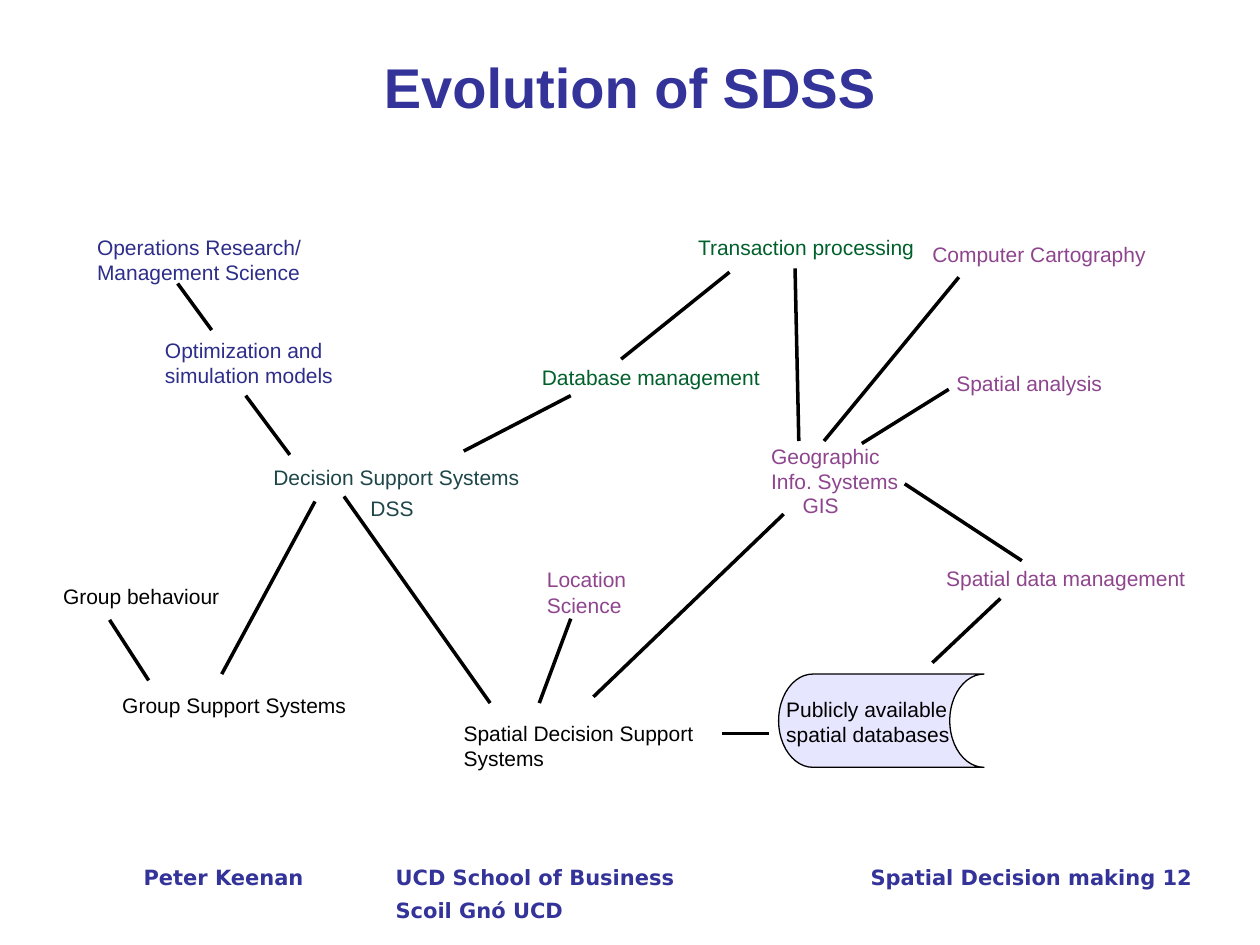
from lxml import etree
from pptx import Presentation
from pptx.dml.color import RGBColor
from pptx.enum.shapes import MSO_CONNECTOR, MSO_SHAPE
from pptx.enum.text import MSO_ANCHOR, PP_ALIGN
from pptx.oxml.ns import qn
from pptx.util import Inches, Pt

STRAIGHT = MSO_CONNECTOR.STRAIGHT
STORAGE = MSO_SHAPE.FLOWCHART_STORED_DATA
MIDDLE = MSO_ANCHOR.MIDDLE
CENTER = PP_ALIGN.CENTER

INDIGO = RGBColor(0x33, 0x33, 0x99)
NAVY = RGBColor(0x2D, 0x2D, 0x8A)
GREEN = RGBColor(0x00, 0x60, 0x2B)
PURPLE = RGBColor(0x8E, 0x45, 0x8E)
TEAL = RGBColor(0x1E, 0x46, 0x49)
BLACK = RGBColor(0x00, 0x00, 0x00)
LAVENDER = RGBColor(0xE6, 0xE6, 0xFF)

HAIRLINE = Pt(0)
LINE_HEIGHT = 0.2

# Text, left, top, width, colour; \v breaks a line
LABELS = [
    ("Operations Research/\vManagement Science", 0.77, 1.86, 1.75, NAVY),
    ("Optimization and\vsimulation models", 1.31, 2.68, 1.5, NAVY),
    ("Transaction processing", 5.54, 1.86, 1.8, GREEN),
    ("Database management", 4.3, 2.89, 1.85, GREEN),
    ("Computer Cartography", 7.4, 1.92, 1.8, PURPLE),
    ("Spatial analysis", 7.59, 2.94, 1.25, PURPLE),
    ("Geographic\vInfo. Systems", 6.12, 3.52, 1.15, PURPLE),
    ("GIS", 6.37, 3.91, 0.4, PURPLE),
    ("Spatial data management", 7.51, 4.49, 2, PURPLE),
    ("Location\vScience", 4.34, 4.5, 0.75, PURPLE),
    ("Decision Support Systems", 2.17, 3.69, 2.1, TEAL),
    ("DSS", 2.94, 3.93, 0.45, TEAL),
    ("Group behaviour", 0.5, 4.63, 1.35, BLACK),
    ("Group Support Systems", 0.97, 5.5, 1.95, BLACK),
    ("Spatial Decision Support\vSystems", 3.68, 5.72, 2, BLACK),
    ("Publicly available\vspatial databases", 6.24, 5.53, 1.4, BLACK),
]

# Start x, start y, end x, end y
LINKS = [
    (1.41, 2.25, 1.68, 2.62),  # operations research - optimization
    (1.95, 3.14, 2.3, 3.61),   # optimization - DSS
    (5.79, 2.16, 4.93, 2.85),  # transactions - database
    (4.53, 3.14, 3.68, 3.58),  # database - DSS
    (6.31, 2.13, 6.34, 3.5),   # transactions - GIS
    (7.61, 2.2, 6.54, 3.5),    # cartography - GIS
    (7.53, 3.09, 6.84, 3.52),  # spatial analysis - GIS
    (8.11, 4.45, 7.18, 3.84),  # spatial data - GIS
    (7.94, 4.75, 7.4, 5.26),   # spatial data - public databases
    (2.5, 3.98, 1.76, 5.35),   # DSS - group support
    (0.87, 4.92, 1.18, 5.4),   # group behaviour - group support
    (2.73, 3.94, 3.89, 5.58),  # DSS - SDSS
    (4.53, 4.91, 4.28, 5.58),  # location science - SDSS
    (6.22, 4.08, 4.71, 5.53),  # GIS - SDSS
    (6.1, 5.82, 5.73, 5.82),   # public databases - SDSS
]

# Text, left, width
FOOTERS = [
    ("Peter Keenan", 1.14, 1.5),
    ("UCD School of Business\vScoil Gnó UCD", 3.14, 2.6),
    ("Spatial Decision making 12", 6.91, 2.8),
]


def add_text(slide, text, left, top, width, color, font_name="Arial"):
    """Add a 12 pt text box without insets and return its paragraph."""
    height = LINE_HEIGHT * (text.count("\v") + 1)
    box = slide.shapes.add_textbox(
        Inches(left), Inches(top), Inches(width), Inches(height))
    frame = box.text_frame
    frame.word_wrap = True
    frame.margin_left = frame.margin_right = 0
    frame.margin_top = frame.margin_bottom = 0
    para = frame.paragraphs[0]
    para.text = text
    para.font.name = font_name
    para.font.size = Pt(12)
    para.font.color.rgb = color
    return para


deck = Presentation()
deck.slide_width = Inches(10)
deck.slide_height = Inches(7.5)
slide = deck.slides.add_slide(deck.slide_layouts[5])

title = slide.shapes.title
title.left, title.top = Inches(0.5), Inches(0.3)
title.width, title.height = Inches(9), Inches(0.77)
title.text_frame.vertical_anchor = MIDDLE
title_para = title.text_frame.paragraphs[0]
title_para.text = "Evolution of SDSS"
title_para.alignment = CENTER
title_para.font.name = "Arial"
title_para.font.size = Pt(32)
title_para.font.bold = True
title_para.font.color.rgb = INDIGO

storage = slide.shapes.add_shape(
    STORAGE, Inches(6.18), Inches(5.35), Inches(1.63), Inches(0.74))
storage.shadow.inherit = False
storage.fill.solid()
storage.fill.fore_color.rgb = LAVENDER
storage.line.color.rgb = BLACK
storage.line.width = HAIRLINE

for ends in LINKS:
    link = slide.shapes.add_connector(STRAIGHT, *map(Inches, ends))
    link.line.color.rgb = BLACK
    link.line.width = HAIRLINE
    etree.SubElement(link._element.spPr, qn("a:effectLst"))

for text, left, top, width, color in LABELS:
    add_text(slide, text, left, top, width, color)

for text, left, width in FOOTERS:
    para = add_text(slide, text, left, 6.8, width, INDIGO, "DejaVu Sans")
    para.font.bold = True
    para.line_spacing = 1.3

deck.save("out.pptx")
